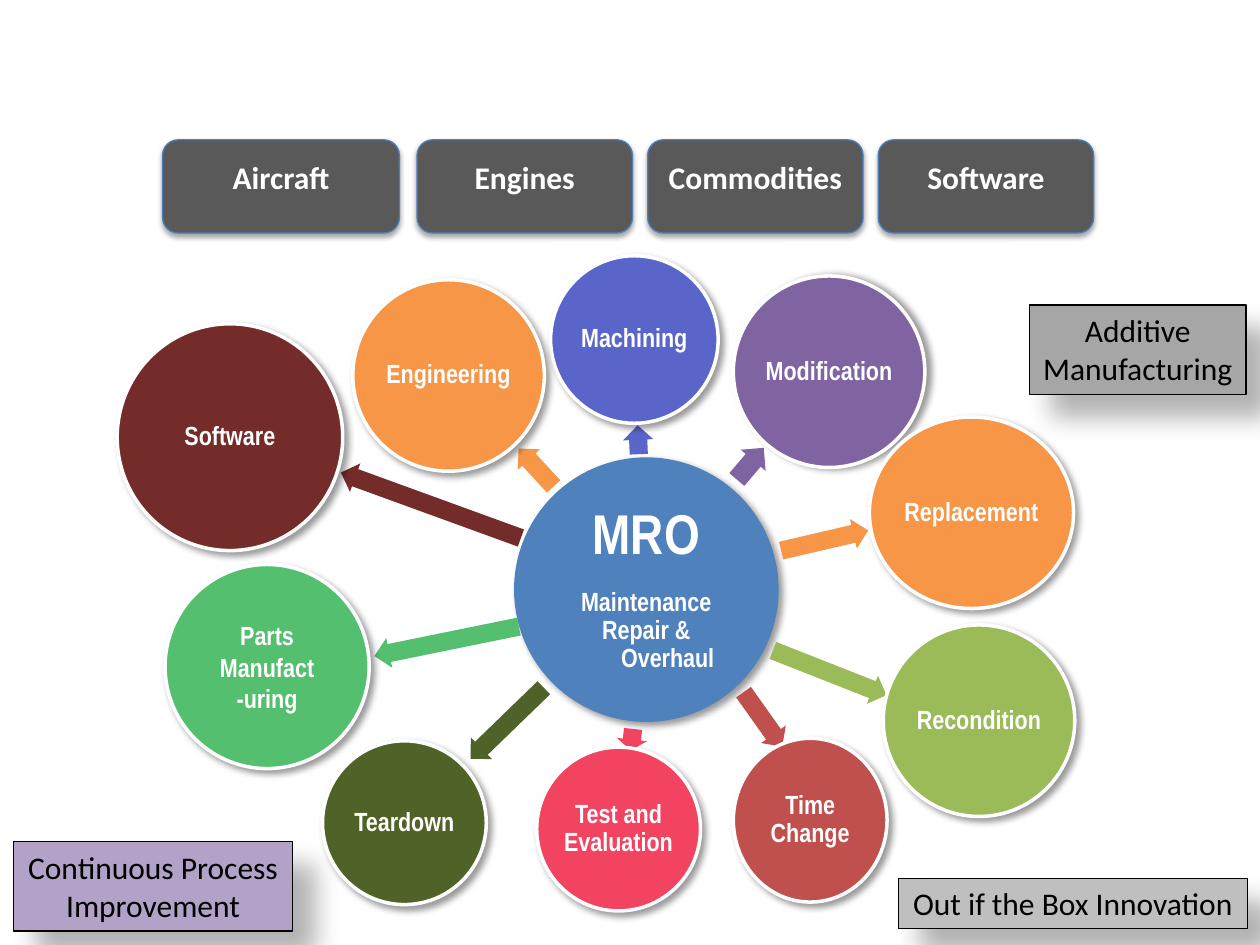
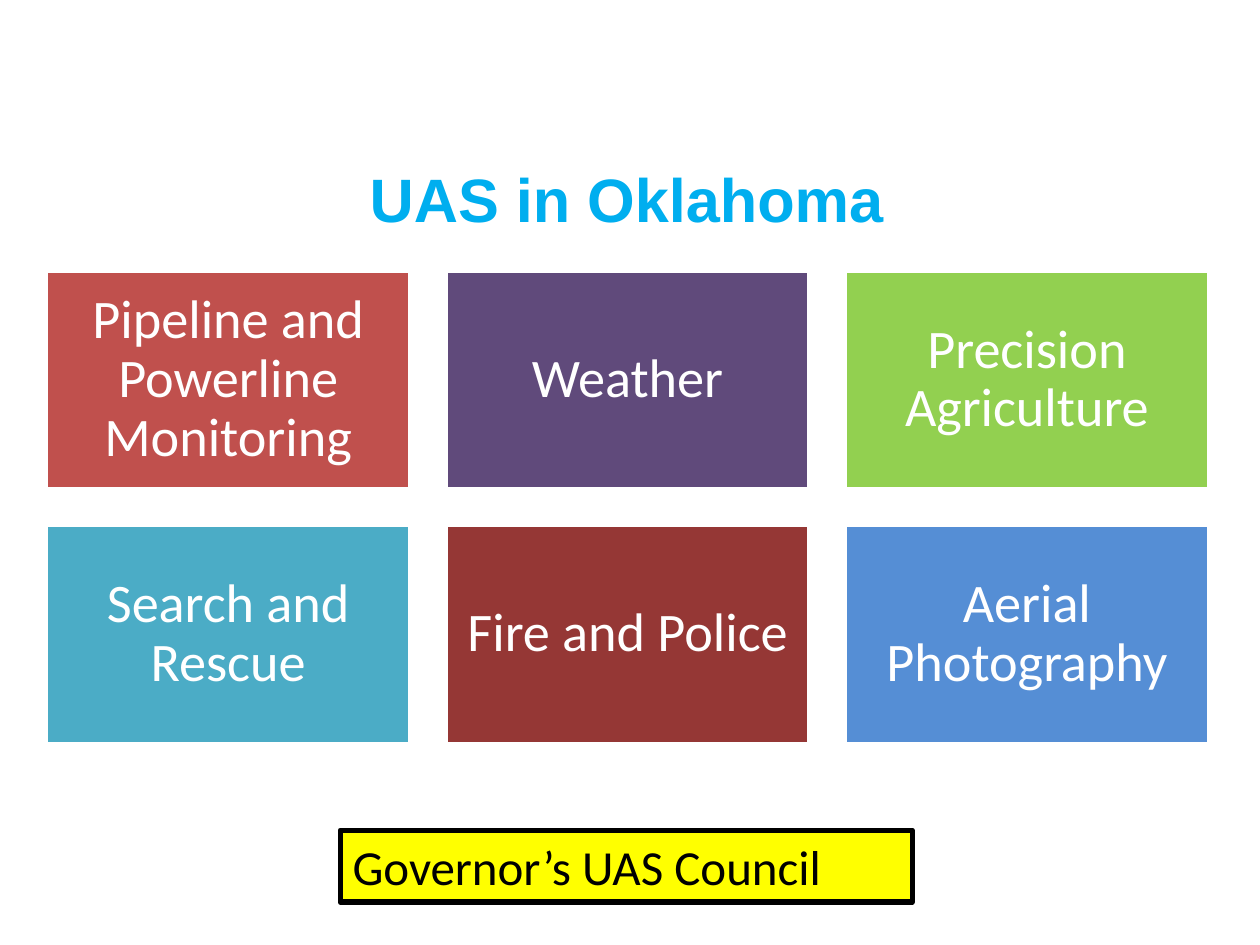
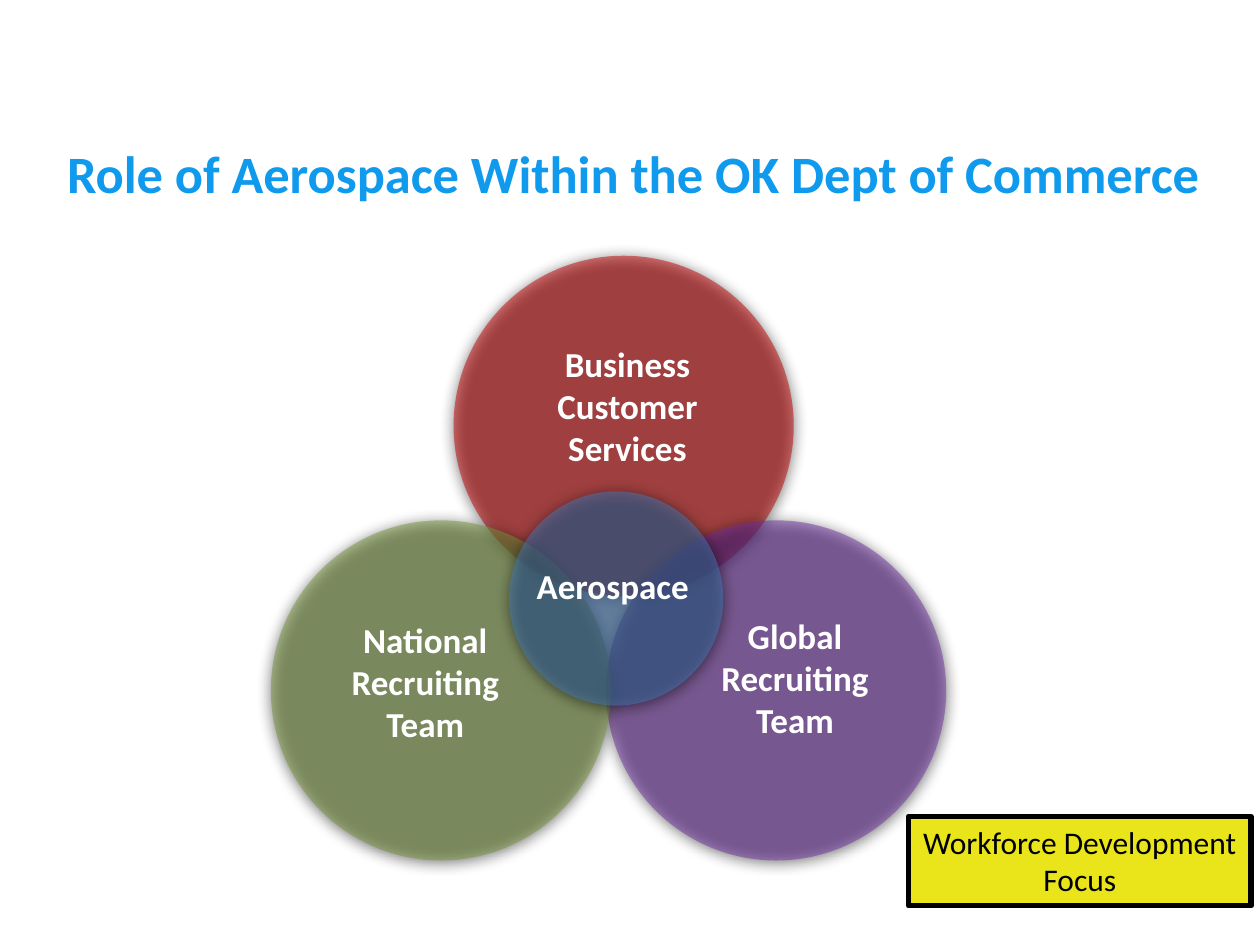
import pptx
import pptx.util
import pptx.dml.color
import pptx.enum.shapes
import pptx.enum.text
import pptx.oxml.ns
from lxml import etree

Inches = pptx.util.Inches
Pt = pptx.util.Pt
qn = pptx.oxml.ns.qn
Shape = pptx.enum.shapes.MSO_SHAPE
Align = pptx.enum.text.PP_ALIGN
Anchor = pptx.enum.text.MSO_ANCHOR

WHITE, BLACK, GREY, YELLOW = "FFFFFF", "000000", "595959", "FFFF00"
SPOKE_SHADOW = (40, 4, 3, 45)
PILL_SHADOW = (35, 3.1, 1.8, 90)
NOTE_SHADOW = (30, 15, 18, 45)
ROLE_SHADOW = (100, 8.5, 1, 90)


def draw(slide, kind, box, fill, line=None, width=0.75, shadow=None, opacity=100):
    shape = slide.shapes.add_shape(kind, *map(Inches, box))
    shape.shadow.inherit = False
    shape.fill.solid()
    shape.fill.fore_color.rgb = pptx.dml.color.RGBColor.from_string(fill)
    if line:
        shape.line.color.rgb = pptx.dml.color.RGBColor.from_string(line)
        shape.line.width = Pt(width)
    else:
        shape.line.fill.background()
    properties = shape._element.spPr
    if opacity < 100:
        color = properties.find(qn("a:solidFill")).find(qn("a:srgbClr"))
        etree.SubElement(color, qn("a:alpha"), val=str(opacity * 1000))
    if shadow:
        alpha, blur, distance, angle = shadow
        outer = etree.SubElement(
            properties.find(qn("a:effectLst")), qn("a:outerShdw"),
            blurRad=str(Pt(blur)), dist=str(Pt(distance)),
            dir=str(angle * 60000), rotWithShape="0")
        color = etree.SubElement(outer, qn("a:srgbClr"), val=BLACK)
        etree.SubElement(color, qn("a:alpha"), val=str(alpha * 1000))
    return shape


def write(shape, text, size, color, font="Calibri", bold=False, align=Align.CENTER,
          anchor=Anchor.TOP, margins=(0.1, 0.05), spacing=1.0, wrap=True):
    frame = shape.text_frame
    frame.text = text
    frame.word_wrap = wrap
    frame.auto_size = pptx.enum.text.MSO_AUTO_SIZE.NONE
    frame.vertical_anchor = anchor
    frame.margin_left = frame.margin_right = Inches(margins[0])
    frame.margin_top = frame.margin_bottom = Inches(margins[1])
    for paragraph in frame.paragraphs:
        paragraph.alignment = align
        paragraph.line_spacing = spacing
        for run in paragraph.runs:
            run.font.name = font
            run.font.size = Pt(size)
            run.font.bold = bold
            run.font.color.rgb = pptx.dml.color.RGBColor.from_string(color)
    return frame


deck = pptx.Presentation()
deck.slide_width = Inches(10)
deck.slide_height = Inches(7.5)
title_only, blank = deck.slide_layouts[5], deck.slide_layouts[6]

mro = deck.slides.add_slide(blank)
hub = draw(mro, Shape.OVAL, (4.08, 3.63, 2.1, 2.1), "4F81BD", shadow=SPOKE_SHADOW)
hub_text = write(hub, "MRO\nMaintenance\nRepair &\nOverhaul", 15, WHITE, "Arial Narrow",
                 True, anchor=Anchor.MIDDLE, margins=(0.04, 0.04), spacing=0.9)
acronym, maintenance, repair, overhaul = hub_text.paragraphs
acronym.runs[0].font.size = Pt(32)
acronym.space_after = Pt(11)
maintenance.line_spacing = 1.0
overhaul._p.get_or_add_pPr().set("marL", str(Inches(0.34)))

spokes = [
    ("Machining", "5A65CA", (4.37, 2.03, 1.33, 1.33), (4.95, 3.37, 0.23, 0.24), 267.6),
    ("Parts Manufact\n-uring", "53BF6F", (1.31, 4.48, 1.62, 1.62), (2.96, 4.97, 1.17, 0.24), 168.5),
    ("Modification", "8064A2", (5.82, 2.19, 1.52, 1.52), (5.79, 3.55, 0.33, 0.26), 310.3),
    ("Test and Evaluation", "F24461", (4.26, 5.93, 1.3, 1.3), (4.93, 5.75, 0.17, 0.24), 96.4),
    ("Replacement", "F79646", (6.9, 3.31, 1.62, 1.52), (6.19, 4.17, 0.71, 0.24), 346.9),
    ("Time Change", "C0504D", (5.82, 5.86, 1.22, 1.3), (5.79, 5.59, 0.53, 0.24), 54.6),
    ("Recondition", "9BBB59", (7.01, 4.96, 1.52, 1.52), (6.1, 5.22, 0.97, 0.24), 21.5),
    ("Software", "742C2A", (0.93, 2.57, 1.79, 1.8), (2.66, 3.89, 1.52, 0.24), 200),
    ("Teardown", "4F6228", (2.56, 5.88, 1.3, 1.3), (3.62, 5.62, 0.81, 0.24), 135.9),
    ("Engineering", "F79646", (2.8, 2.22, 1.52, 1.52), (4.05, 3.59, 0.41, 0.24), 227.3),
]
for service, color, circle_box, arrow_box, angle in spokes:
    arrow = draw(mro, Shape.RIGHT_ARROW, arrow_box, color)
    arrow.adjustments[0] = 0.6
    arrow.adjustments[1] = 0.5
    arrow.rotation = angle
    shadow = (40, 4, 3, 0) if service == "Modification" else SPOKE_SHADOW
    circle = draw(mro, Shape.OVAL, circle_box, color, WHITE, 2, shadow)
    write(circle, service, 15, WHITE, "Arial Narrow", True, anchor=Anchor.MIDDLE,
          margins=(0.02, 0.02), spacing=1.0 if "\n" in service else 0.9)

for sector, left, width in [("Aircraft", 1.29, 1.88), ("Engines", 3.31, 1.71),
                            ("Commodities", 5.14, 1.71), ("Software", 6.97, 1.71)]:
    pill = draw(mro, Shape.ROUNDED_RECTANGLE, (left, 1.11, width, 0.74), GREY,
                "4B7EBC", shadow=PILL_SHADOW)
    write(pill, sector, 18, WHITE, bold=True, margins=(0.05, 0.11))

for idea, box, color in [
    ("Out if the Box Innovation", (7.13, 6.97, 2.77, 0.4), "BFBFBF"),
    ("Continuous Process\nImprovement", (0.11, 6.68, 2.21, 0.71), "B3A2C7"),
    ("Additive\nManufacturing", (8.17, 2.42, 1.72, 0.71), "A6A6A6"),
]:
    note = draw(mro, Shape.RECTANGLE, box, color, BLACK, shadow=NOTE_SHADOW)
    write(note, idea, 18, BLACK, wrap=False)

uas = deck.slides.add_slide(title_only)
heading = uas.shapes.title
heading.left, heading.top, heading.width, heading.height = map(Inches, (0.36, 1, 9.23, 1.14))
write(heading, "UAS in Oklahoma", 35, "00AEEF", "Arial", True, anchor=Anchor.MIDDLE)

uses = [
    ("Pipeline and Powerline Monitoring", "C0504D"),
    ("Weather", "604A7B"),
    ("Precision Agriculture", "92D050"),
    ("Search and Rescue", "4BACC6"),
    ("Fire and Police", "953735"),
    ("Aerial Photography", "558ED5"),
]
for index, (use, color) in enumerate(uses):
    row, column = divmod(index, 3)
    tile = draw(uas, Shape.RECTANGLE, (0.37 + 3.17 * column, 2.15 + 2.02 * row, 2.88, 1.73),
                color, WHITE, 2)
    write(tile, use, 31, WHITE, anchor=Anchor.MIDDLE, margins=(0.13, 0.13), spacing=0.9)

council = draw(uas, Shape.RECTANGLE, (2.7, 6.59, 4.54, 0.57), YELLOW, BLACK, 3)
write(council, "Governor’s UAS Council", 28, BLACK, align=Align.LEFT)

commerce = deck.slides.add_slide(title_only)
heading = commerce.shapes.title
heading.left, heading.top, heading.width, heading.height = map(Inches, (0.06, 1.07, 9.94, 0.61))
write(heading, "Role of Aerospace Within the OK Dept of Commerce", 30, "109AED", bold=True)

for left, top, diameter, color in [(3.6, 2.03, 2.7, "C00000"), (4.81, 4.13, 2.7, "7030A0"),
                                   (2.15, 4.13, 2.7, "77933C"), (4.04, 3.9, 1.7, "467AB8")]:
    draw(commerce, Shape.OVAL, (left, top, diameter, diameter), color,
         shadow=ROLE_SHADOW, opacity=50)

for team, box, align in [
    ("Business Customer Services", (4.32, 2.67, 1.32, 1.11), Align.CENTER),
    ("Global Recruiting Team", (5.53, 4.83, 1.56, 1.11), Align.CENTER),
    ("National Recruiting Team", (2.67, 4.86, 1.41, 1.11), Align.CENTER),
    ("Aerospace", (4.16, 4.43, 1.48, 0.44), Align.LEFT),
]:
    label = commerce.shapes.add_textbox(*map(Inches, box))
    write(label, team, 20, WHITE, bold=True, align=align)

focus = draw(commerce, Shape.RECTANGLE, (7.21, 6.48, 2.72, 0.71), "EAE51B", BLACK, 3)
write(focus, "Workforce Development\nFocus", 18, BLACK, wrap=False)

deck.save("out.pptx")
